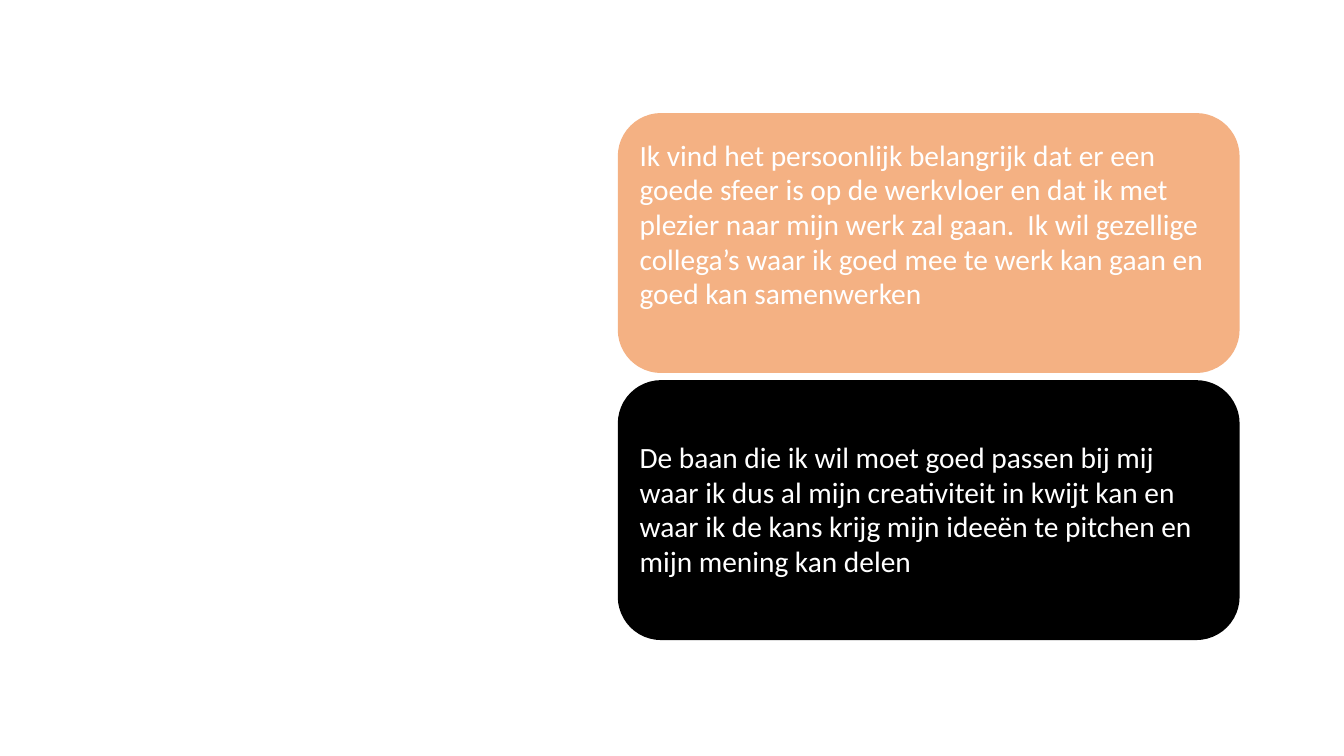
from pptx import Presentation
from pptx.dml.color import RGBColor
from pptx.enum.shapes import MSO_SHAPE
from pptx.enum.text import MSO_ANCHOR, PP_ALIGN
from pptx.util import Cm, Pt

ROUNDED = MSO_SHAPE.ROUNDED_RECTANGLE
MIDDLE = MSO_ANCHOR.MIDDLE
LEFT = PP_ALIGN.LEFT

INSET = 0.23
GAP = 0.18
WISHES = [
    ("Ik vind het persoonlijk belangrijk dat er een goede sfeer is op de "
     "werkvloer en dat ik met plezier naar mijn werk zal gaan.  Ik wil "
     "gezellige collega’s waar ik goed mee te werk kan gaan en goed kan "
     "samenwerken", "F4B183", 0.9),
    ("De baan die ik wil moet goed passen bij mij waar ik dus al mijn "
     "creativiteit in kwijt kan en waar ik de kans krijg mijn ideeën te "
     "pitchen en mijn mening kan delen", "000000", 0),
]


def color(hex_string):
    """Turn a hex string into a colour."""
    return RGBColor.from_string(hex_string)


def write_text(frame, text, size=21, font="Calibri", ink="FFFFFF",
               align=LEFT, spacing=0.98):
    """Write one formatted paragraph into a text frame."""
    paragraph = frame.paragraphs[0]
    paragraph.alignment = align
    paragraph.line_spacing = spacing
    run = paragraph.add_run()
    run.text = text
    run.font.size = Pt(size)
    run.font.name = font
    run.font.color.rgb = color(ink)


def add_wish(slide, text, fill, lift, left, top, width, height):
    """Place one rounded card whose text is lifted by extra room below."""
    card = slide.shapes.add_shape(
        ROUNDED, Cm(left), Cm(top), Cm(width), Cm(height))
    card.shadow.inherit = False
    card.fill.solid()
    card.fill.fore_color.rgb = color(fill)
    card.line.fill.background()
    frame = card.text_frame
    frame.word_wrap = True
    frame.vertical_anchor = MIDDLE
    frame.margin_left = frame.margin_right = frame.margin_top = Cm(INSET)
    frame.margin_bottom = Cm(INSET + lift)
    write_text(frame, text)


def add_wishes(slide, left, top, width, height):
    """Stack the wish cards evenly in the given box."""
    card_height = (height - GAP * (len(WISHES) - 1)) / len(WISHES)
    for index, (text, fill, lift) in enumerate(WISHES):
        card_top = top + index * (card_height + GAP)
        add_wish(slide, text, fill, lift, left, card_top, width, card_height)


def main():
    """Build and save the slide."""
    deck = Presentation()
    deck.slide_width, deck.slide_height = Cm(33.87), Cm(19.05)
    slide = deck.slides.add_slide(deck.slide_layouts[6])
    add_wishes(slide, left=15.57, top=2.85, width=15.67, height=13.28)
    deck.save("out.pptx")


if __name__ == "__main__":
    main()
